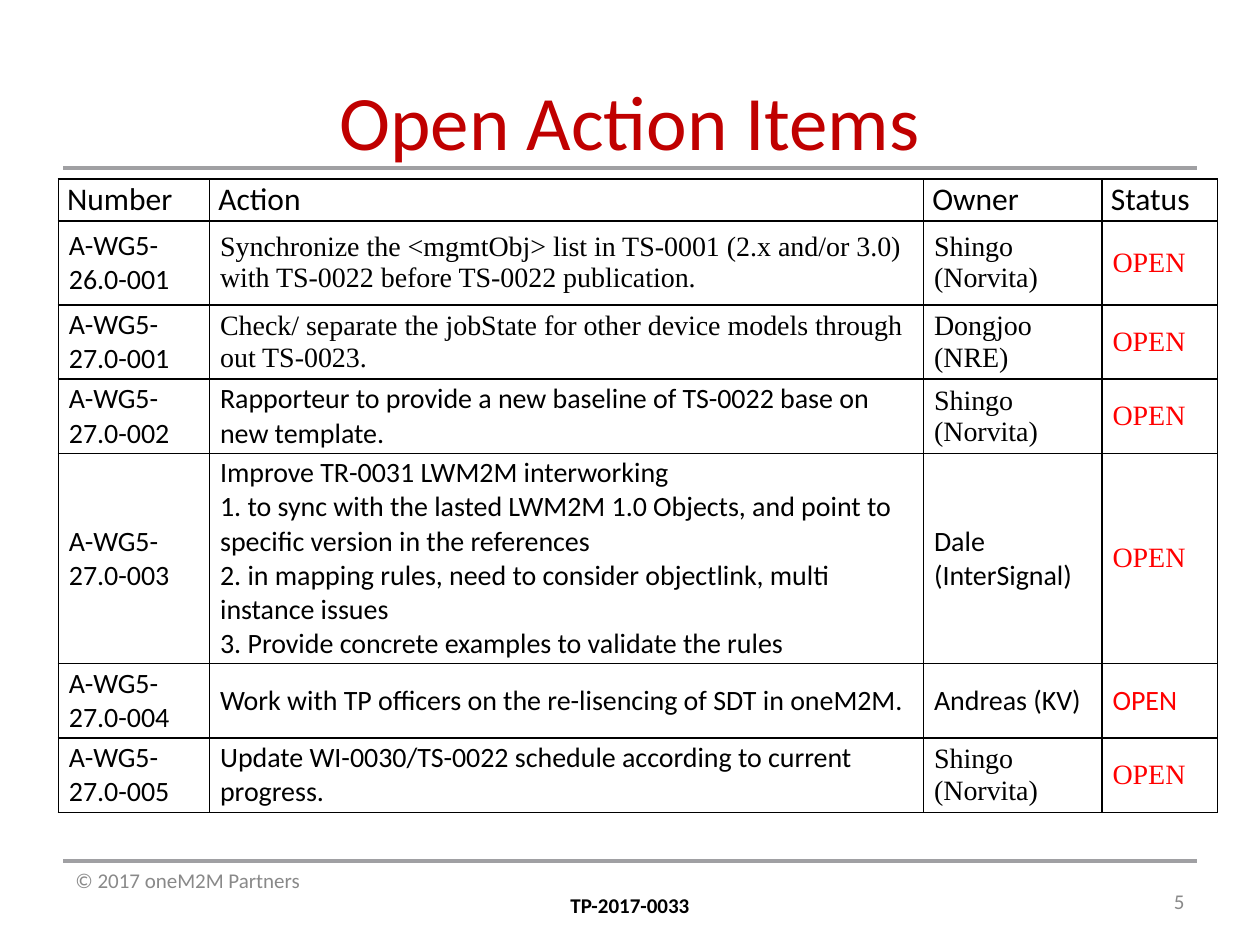
from lxml.etree import SubElement
from pptx import Presentation
from pptx.dml.color import RGBColor
from pptx.enum.shapes import MSO_CONNECTOR
from pptx.enum.text import MSO_ANCHOR, PP_ALIGN
from pptx.oxml.ns import qn
from pptx.util import Pt

theme = {
    "red": "C00000", "open": "FF0000", "ink": "000000",
    "grey": "898989", "rule": "A0A0A3",
    "title": 44, "head": 18, "body": 16, "foot": 12,
    "C": "Calibri", "T": "Times New Roman",
}


def write(para, text, size, color, face="C", bold=False):
    run = para.add_run()
    run.text = text
    font = run.font
    font.name = theme[face]
    font.size = Pt(theme[size])
    font.bold = bold
    font.color.rgb = RGBColor.from_string(theme[color])


def add_box(left, top, width, height):
    frame = slide.shapes.add_textbox(Pt(left), Pt(top), Pt(width), Pt(height)).text_frame
    frame.word_wrap = True
    return frame


deck = Presentation()
deck.slide_width, deck.slide_height = Pt(720), Pt(540)
slide = deck.slides.add_slide(deck.slide_layouts[6])

for y in (492, 96):
    line = slide.shapes.add_connector(MSO_CONNECTOR.STRAIGHT, Pt(36), Pt(y), Pt(684), Pt(y))
    line.line.color.rgb = RGBColor.from_string(theme["rule"])
    line.line.width = Pt(1.75)
    SubElement(line._element.spPr, qn("a:effectLst"))

foot = add_box(36, 492, 648, 36)
write(foot.paragraphs[0], "© 2017 oneM2M Partners", "foot", "grey")
code = foot.add_paragraph()
code.alignment = PP_ALIGN.CENTER
write(code, "TP-2017-0033", "foot", "ink", bold=True)

title = add_box(36, 36, 648, 90)
title.margin_top = Pt(6)
title.paragraphs[0].alignment = PP_ALIGN.CENTER
write(title.paragraphs[0], "Open Action Items", "title", "red")

page = add_box(516, 500.5, 168, 28.75)
page.vertical_anchor = MSO_ANCHOR.MIDDLE
page.paragraphs[0].alignment = PP_ALIGN.RIGHT
write(page.paragraphs[0], "5", "foot", "grey")

rows = [
    (24, "CCCC", "Number", "Action", "Owner", "Status"),
    (48, "CTTT", "A-WG5-26.0-001",
     "Synchronize the <mgmtObj> list in TS-0001 (2.x and/or 3.0) with TS-0022 before TS-0022 publication.",
     "Shingo (Norvita)", "OPEN"),
    (42.5, "CTTT", "A-WG5-27.0-001",
     "Check/ separate the jobState for other device models through out TS-0023.",
     "Dongjoo (NRE)", "OPEN"),
    (42.5, "CCTT", "A-WG5-27.0-002",
     "Rapporteur to provide a new baseline of TS-0022 base on new template.",
     "Shingo (Norvita)", "OPEN"),
    (120, "CCCT", "A-WG5-27.0-003",
     "Improve TR-0031 LWM2M interworking\n"
     "1. to sync with the lasted LWM2M 1.0 Objects, and point to specific version in the references\n"
     "2. in mapping rules, need to consider objectlink, multi instance issues\n"
     "3. Provide concrete examples to validate the rules",
     "Dale (InterSignal)", "OPEN"),
    (42.5, "CCCC", "A-WG5-27.0-004",
     "Work with TP officers on the re-lisencing of SDT in oneM2M.",
     "Andreas (KV)", "OPEN"),
    (42.5, "CCTT", "A-WG5-27.0-005",
     "Update WI-0030/TS-0022 schedule according to current progress.",
     "Shingo (Norvita)", "OPEN"),
]
widths = (86.4, 408, 102, 66)
high = sum(row[0] for row in rows)
table = slide.shapes.add_table(
    len(rows), len(widths), Pt(33.4), Pt(102.2), Pt(sum(widths)), Pt(high)).table
table.first_row = table.horz_banding = False
for col, width in zip(table.columns, widths):
    col.width = Pt(width)

for r, (height, faces, *texts) in enumerate(rows):
    table.rows[r].height = Pt(height)
    for c, (face, text) in enumerate(zip(faces, texts)):
        cell = table.cell(r, c)
        cell.margin_left = cell.margin_right = Pt(6 if r else 5)
        cell.margin_top = cell.margin_bottom = Pt(1.2)
        cell.vertical_anchor = MSO_ANCHOR.MIDDLE if r else MSO_ANCHOR.TOP
        props = cell._tc.get_or_add_tcPr()
        for side in "LRTB":
            edge = SubElement(props, qn(f"a:ln{side}"), w=str(Pt(1)))
            fill = SubElement(edge, qn("a:solidFill"))
            SubElement(fill, qn("a:srgbClr"), val=theme["ink"])
        cell.fill.background()
        frame = cell.text_frame
        for i, part in enumerate(text.split("\n")):
            para = frame.add_paragraph() if i else frame.paragraphs[0]
            write(para, part, "body" if r else "head", "open" if r and c == 3 else "ink", face)

deck.save("out.pptx")
